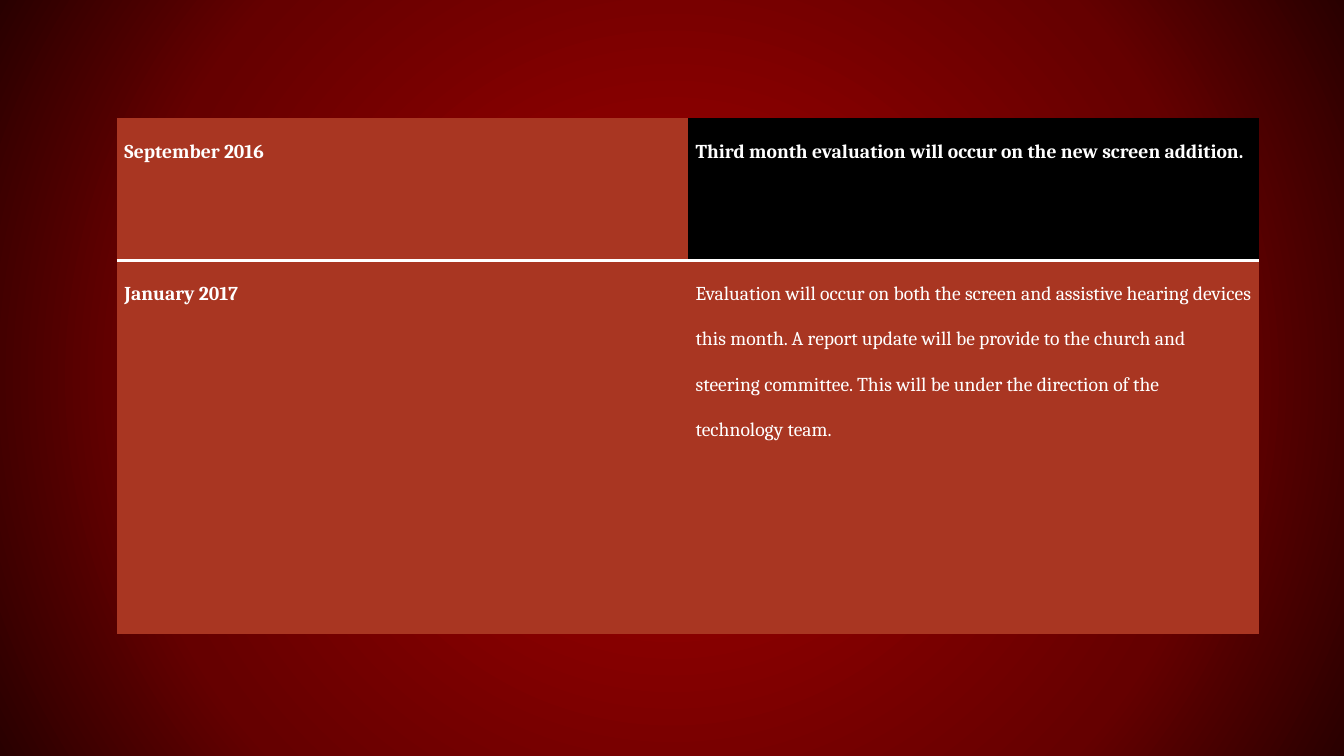
from pptx import Presentation
from pptx.dml.color import RGBColor
from pptx.oxml import parse_xml
from pptx.oxml.ns import nsdecls, qn
from pptx.util import Pt

ROWS = [
    ("September 2016",
     "Third month evaluation will occur on the new screen addition."),
    ("January 2017",
     "Evaluation will occur on both the screen and assistive hearing devices "
     "this month. A report update will be provide to the church and steering "
     "committee. This will be under the direction of the technology team."),
]
THEME = {
    "font": "Cambria", "size": 14, "text": "FFFFFF", "rule": "FFFFFF",
    "fills": [("A93622", "000000"), ("A93622", "A93622")],
    "bold": [(True, True), (True, False)],
    "glow": [(17, "960000"), (71, "650000"), (100, "290000")],
}
PAGE = (960, 540)
LEFT, TOP = 83.5, 84.2
COL = 408
HEIGHTS = (102, 266.4)
PAD, RULE = 5.4, 2
PLAIN = "{2D5ABB26-0587-4C30-8999-92F81FD0307C}"


def put(item, values):
    """Set each named attribute of item."""
    for name, value in values.items():
        setattr(item, name, value)


def glow(slide):
    """Give the slide a radial gradient background."""
    stops = "".join(
        f'<a:gs pos="{pos * 1000}"><a:srgbClr val="{color}"/></a:gs>'
        for pos, color in THEME["glow"])
    slide.element.cSld.insert(0, parse_xml(
        f'<p:bg {nsdecls("p", "a")}><p:bgPr><a:gradFill rotWithShape="1">'
        f'<a:gsLst>{stops}</a:gsLst><a:path path="circle">'
        '<a:fillToRect l="50000" t="50000" r="50000" b="50000"/></a:path>'
        '</a:gradFill><a:effectLst/></p:bgPr></p:bg>'))


def rule(cell):
    """Draw a line under the cell."""
    cell._tc.get_or_add_tcPr().insert(0, parse_xml(
        f'<a:lnB {nsdecls("a")} w="{Pt(RULE)}"><a:solidFill>'
        f'<a:srgbClr val="{THEME["rule"]}"/></a:solidFill></a:lnB>'))


def write(cell, words, fill, bold):
    put(cell, {"margin_left": Pt(PAD), "margin_right": Pt(PAD),
               "margin_top": 0, "margin_bottom": 0, "text": words})
    cell.fill.solid()
    cell.fill.fore_color.rgb = RGBColor.from_string(fill)
    para = cell.text_frame.paragraphs[0]
    para.line_spacing = 2.0
    font = para.runs[0].font
    put(font, {"name": THEME["font"], "size": Pt(THEME["size"]), "bold": bold})
    font.color.rgb = RGBColor.from_string(THEME["text"])


def main():
    deck = Presentation()
    put(deck, {"slide_width": Pt(PAGE[0]), "slide_height": Pt(PAGE[1])})
    slide = deck.slides.add_slide(deck.slide_layouts[6])
    glow(slide)

    cols = len(ROWS[0])
    table = slide.shapes.add_table(
        len(ROWS), cols, Pt(LEFT), Pt(TOP),
        Pt(COL * cols), Pt(sum(HEIGHTS))).table
    put(table, {"first_row": False, "horz_banding": False})
    table._tbl.tblPr.find(qn("a:tableStyleId")).text = PLAIN

    for col in table.columns:
        col.width = Pt(COL)
    for r, (line, high) in enumerate(zip(ROWS, HEIGHTS)):
        table.rows[r].height = Pt(high)
        for c, words in enumerate(line):
            cell = table.cell(r, c)
            write(cell, words, THEME["fills"][r][c], THEME["bold"][r][c])
            if r < len(ROWS) - 1:
                rule(cell)

    deck.save("out.pptx")


if __name__ == "__main__":
    main()
